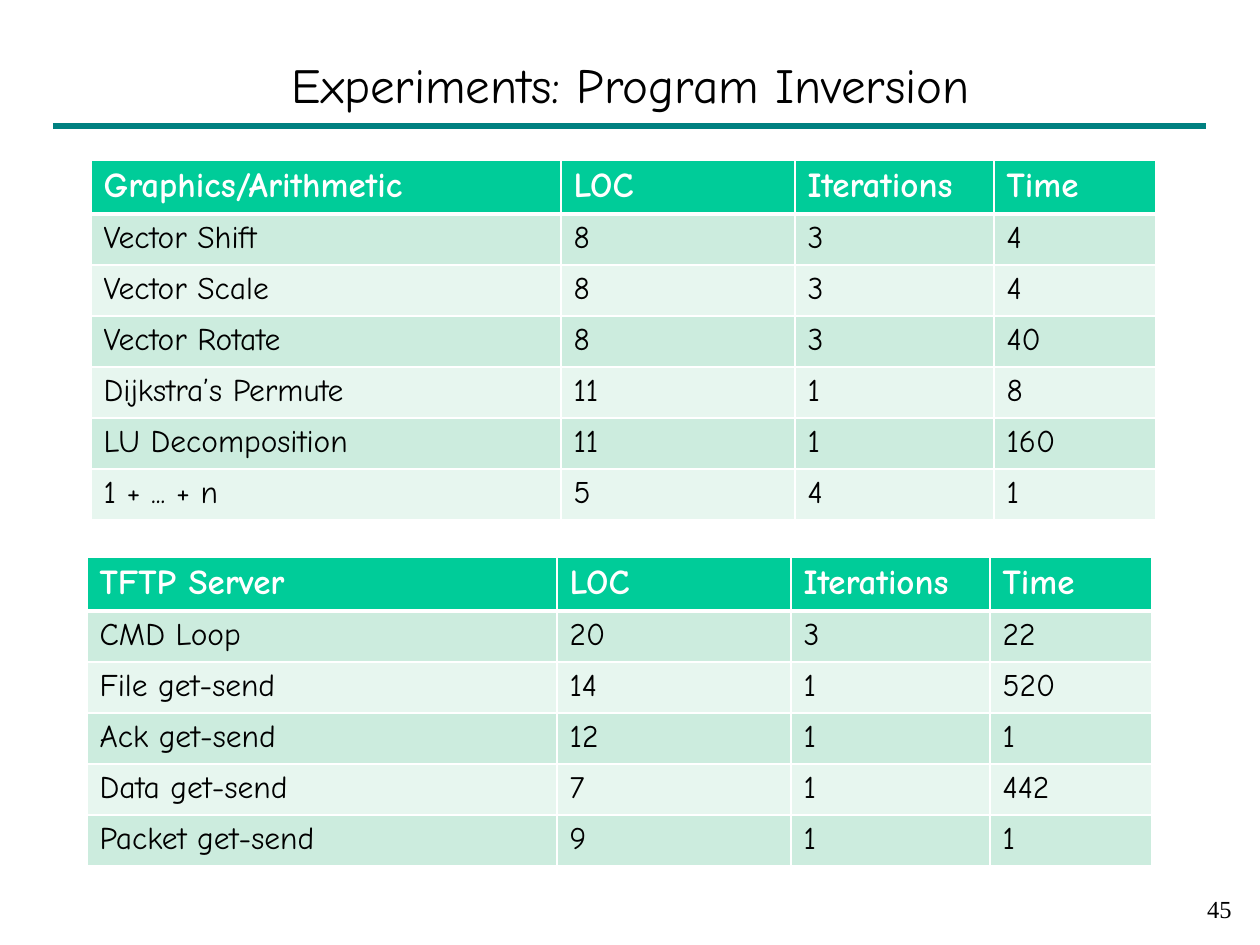
from dataclasses import dataclass

from lxml import etree
from pptx import Presentation
from pptx import util as u
from pptx.dml.color import RGBColor
from pptx.enum import shapes, text
from pptx.oxml import ns

PX_PER_INCH = 126


def px(length):
    return u.Inches(length / PX_PER_INCH)


@dataclass(frozen=True)
class Theme:
    ink: str = "000000"
    paper: str = "FFFFFF"
    rule: str = "008080"
    header: str = "00CC99"
    bands: tuple = ("CCECDE", "E7F6EF")
    font: str = "Comic Neue"
    number_font: str = "Times New Roman"
    title_size: int = 28
    header_size: int = 20
    body_size: int = 18
    number_size: int = 14


class SlideBuilder:
    def __init__(self, slide, theme):
        self.slide = slide
        self.theme = theme

    def add_run(self, paragraph, words, size, color, font=None, bold=False):
        run = paragraph.add_run()
        run.text = words
        run.font.name = font or self.theme.font
        run.font.size = u.Pt(size)
        run.font.bold = bold
        run.font.color.rgb = RGBColor.from_string(color)

    def rule(self, left, right, y, weight):
        line = self.slide.shapes.add_connector(
            shapes.MSO_CONNECTOR.STRAIGHT, px(left), px(y), px(right), px(y))
        line.line.color.rgb = RGBColor.from_string(self.theme.rule)
        line.line.width = u.Pt(weight)
        etree.SubElement(line.element.spPr, ns.qn("a:effectLst"))

    def title(self, words, left, top, width, height):
        heading = self.slide.shapes.title
        heading.left, heading.top = px(left), px(top)
        heading.width, heading.height = px(width), px(height)
        frame = heading.text_frame
        frame.vertical_anchor = text.MSO_ANCHOR.MIDDLE
        frame.paragraphs[0].alignment = text.PP_ALIGN.CENTER
        self.add_run(frame.paragraphs[0], words, self.theme.title_size, self.theme.ink)

    def page_number(self, number, left, top, width, height):
        frame = self.slide.shapes.add_textbox(
            px(left), px(top), px(width), px(height)).text_frame
        frame.word_wrap = True
        frame.paragraphs[0].alignment = text.PP_ALIGN.RIGHT
        self.add_run(frame.paragraphs[0], number, self.theme.number_size,
                     self.theme.ink, self.theme.number_font)

    def borders(self, cell, top, bottom):
        """Draw the cell's four edges; top and bottom are weights in points."""
        properties = cell._tc.get_or_add_tcPr()
        for edge, weight in (("L", 1), ("R", 1), ("T", top), ("B", bottom)):
            line = etree.SubElement(properties, ns.qn(f"a:ln{edge}"), w=str(u.Pt(weight)))
            fill = etree.SubElement(line, ns.qn("a:solidFill"))
            etree.SubElement(fill, ns.qn("a:srgbClr"), val=self.theme.paper)

    def results_table(self, left, top, column_widths, header_height, row_height, rows):
        heights = [header_height] + [row_height] * (len(rows) - 1)
        table = self.slide.shapes.add_table(
            len(rows), len(column_widths), px(left), px(top),
            px(sum(column_widths)), px(sum(heights))).table
        for column, width in zip(table.columns, column_widths):
            column.width = px(width)
        for r, (values, height) in enumerate(zip(rows, heights)):
            table.rows[r].height = px(height)
            is_header = r == 0
            fill = self.theme.header if is_header else self.theme.bands[(r - 1) % 2]
            size = self.theme.header_size if is_header else self.theme.body_size
            color = self.theme.paper if is_header else self.theme.ink
            for c, value in enumerate(values):
                cell = table.cell(r, c)
                self.borders(cell, top=3 if r == 1 else 1, bottom=3 if is_header else 1)
                cell.fill.solid()
                cell.fill.fore_color.rgb = RGBColor.from_string(fill)
                self.add_run(cell.text_frame.paragraphs[0], value, size, color,
                             bold=is_header)


MEASURES = ("LOC", "Iterations", "Time")
COLUMN_WIDTHS = (470, 234, 199, 162)
HEADER_HEIGHT, ROW_HEIGHT = 54, 51

ARITHMETIC = [
    ("Graphics/Arithmetic", *MEASURES),
    ("Vector Shift", "8", "3", "4"),
    ("Vector Scale", "8", "3", "4"),
    ("Vector Rotate", "8", "3", "40"),
    ("Dijkstra’s Permute", "11", "1", "8"),
    ("LU Decomposition", "11", "1", "160"),
    ("1 + ... + n", "5", "4", "1"),
]
TFTP = [
    ("TFTP Server", *MEASURES),
    ("CMD Loop", "20", "3", "22"),
    ("File get-send", "14", "1", "520"),
    ("Ack get-send", "12", "1", "1"),
    ("Data get-send", "7", "1", "442"),
    ("Packet get-send", "9", "1", "1"),
]


def main():
    deck = Presentation()
    deck.slide_width, deck.slide_height = px(1260), px(945)
    title_only = deck.slide_layouts[5]
    builder = SlideBuilder(deck.slides.add_slide(title_only), Theme())

    builder.rule(53, 1206, 126, weight=4)
    builder.title("Experiments: Program Inversion", 95, 42, 1071, 84)
    for left, top, rows in ((91, 160, ARITHMETIC), (87, 557, TFTP)):
        builder.results_table(left, top, COLUMN_WIDTHS, HEADER_HEIGHT, ROW_HEIGHT, rows)
    builder.page_number("45", 982, 888, 262, 53)

    deck.save("out.pptx")


if __name__ == "__main__":
    main()
